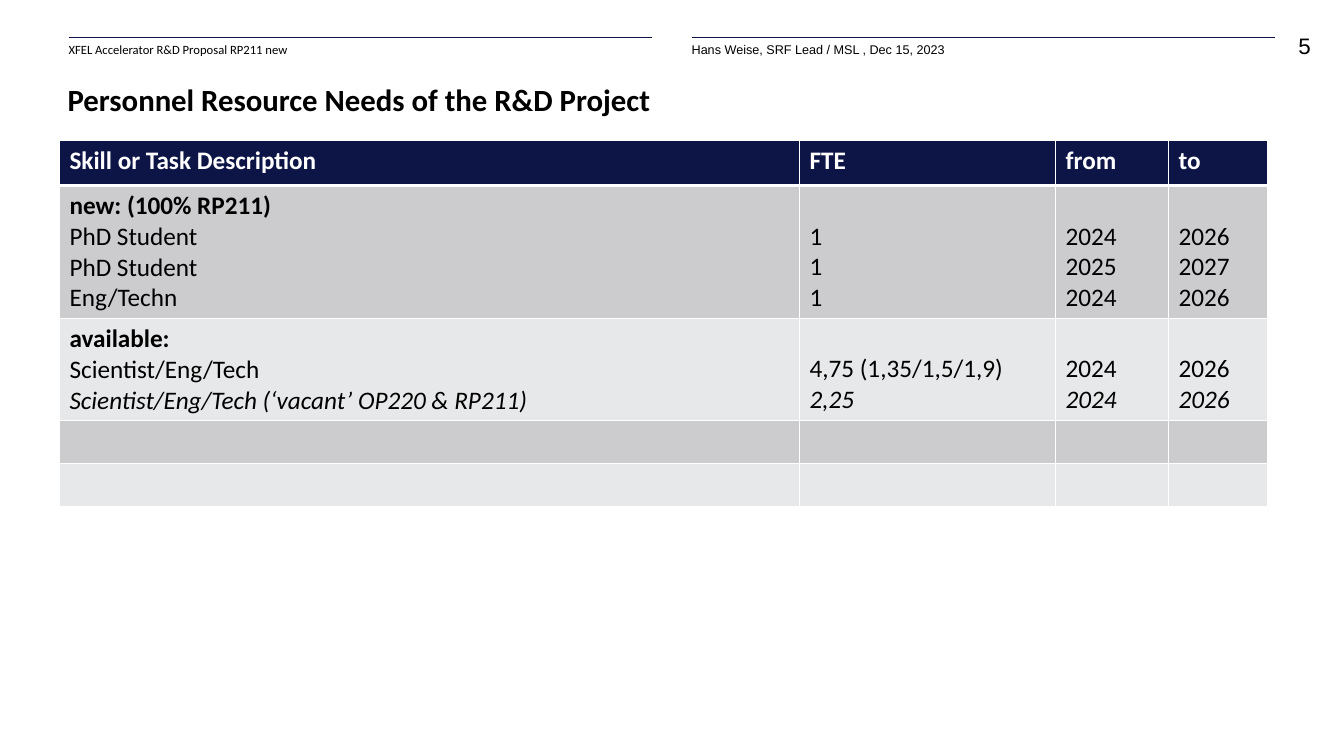
from lxml.etree import SubElement
from pptx import Presentation
from pptx.dml.color import RGBColor
from pptx.enum.shapes import MSO_CONNECTOR
from pptx.enum.text import MSO_ANCHOR, MSO_AUTO_SIZE, PP_ALIGN
from pptx.oxml.ns import qn
from pptx.util import Inches, Pt

COLORS = {"navy": "0D1546", "dark band": "CCCCCF", "light band": "E7E8E9",
          "white": "FFFFFF", "black": "000000"}
TITLE = "Personnel Resource Needs of the R&D Project"
PAGE_NUMBER = "5"
HEADERS = [("XFEL Accelerator R&D Proposal RP211 new", "Calibri"),
           ("Hans Weise, SRF Lead / MSL , Dec 15, 2023", "Arial")]
TABLE = [
    [[("Skill or Task Description", "bold")], [("FTE", "bold")],
     [("from", "bold")], [("to", "bold")]],
    [[("new: (100% RP211)", "bold"), ("PhD Student", ""), ("PhD Student", ""), ("Eng/Techn", "")],
     [("1", ""), ("1", ""), ("1", "")],
     [("2024", ""), ("2025", ""), ("2024", "")],
     [("2026", ""), ("2027", ""), ("2026", "")]],
    [[("available:", "bold"), ("Scientist/Eng/Tech", ""),
      ("Scientist/Eng/Tech (‘vacant’ OP220 & RP211)", "italic")],
     [("4,75 (1,35/1,5/1,9)", ""), ("2,25", "italic")],
     [("2024", ""), ("2024", "italic")],
     [("2026", ""), ("2026", "italic")]],
    [[], [], [], []],
    [[], [], [], []],
]
COLUMN_WIDTHS = [7.34, 2.54, 1.12, 0.98]
ROW_HEIGHTS = [0.45, 1.32, 1.01, 0.43, 0.43]
TABLE_LEFT, TABLE_TOP = 0.59, 1.39
MARGIN, HEADER_WIDTH, HEADER_GAP = 0.68, 5.79, 0.39
RULE_TOP, HEADER_TOP = 0.37, 0.42


def rgb(name):
    return RGBColor.from_string(COLORS[name])


def write(paragraph, text, font_name, size, color="black", style=""):
    run = paragraph.add_run()
    run.text = text
    run.font.name = font_name
    run.font.size = Pt(size)
    run.font.color.rgb = rgb(color)
    run.font.bold = style == "bold"
    run.font.italic = style == "italic"


def clear_margins(frame):
    frame.margin_left = frame.margin_right = frame.margin_top = frame.margin_bottom = 0


def add_text_box(left, top, width, height, wrap=True):
    box = slide.shapes.add_textbox(Inches(left), Inches(top), Inches(width), Inches(height))
    clear_margins(box.text_frame)
    box.text_frame.word_wrap = wrap
    return box.text_frame.paragraphs[0]


def add_borders(cell, bottom_width):
    properties = cell._tc.get_or_add_tcPr()
    for side, width in (("L", 1), ("R", 1), ("T", 1), ("B", bottom_width)):
        line = SubElement(properties, qn(f"a:ln{side}"), w=str(Pt(width)))
        fill = SubElement(line, qn("a:solidFill"))
        SubElement(fill, qn("a:srgbClr"), val=COLORS["white"])


presentation = Presentation()
presentation.slide_width = Inches(13.33)
presentation.slide_height = Inches(7.5)
slide = presentation.slides.add_slide(presentation.slide_layouts[5])

for index, (text, font_name) in enumerate(HEADERS):
    left = MARGIN + index * (HEADER_WIDTH + HEADER_GAP)
    rule = slide.shapes.add_connector(
        MSO_CONNECTOR.STRAIGHT, Inches(left), Inches(RULE_TOP),
        Inches(left + HEADER_WIDTH), Inches(RULE_TOP))
    rule.line.color.rgb = rgb("navy")
    rule.line.width = Pt(0.5)
    SubElement(rule._element.spPr, qn("a:effectLst"))
    write(add_text_box(left, HEADER_TOP, HEADER_WIDTH, 0.24), text, font_name, 9)

number = add_text_box(12.44, 0.32, 0.56, 0.32, wrap=False)
number.alignment = PP_ALIGN.RIGHT
write(number, PAGE_NUMBER, "Arial", 16)

title = slide.shapes.title
title.left, title.top, title.width, title.height = map(Inches, (0.67, 0.78, 11.98, 0.39))
title_frame = title.text_frame
clear_margins(title_frame)
title_frame.word_wrap = True
title_frame.auto_size = MSO_AUTO_SIZE.NONE
title_frame.vertical_anchor = MSO_ANCHOR.BOTTOM
title_frame.paragraphs[0].alignment = PP_ALIGN.LEFT
write(title_frame.paragraphs[0], TITLE, "Calibri", 22, style="bold")

table = slide.shapes.add_table(
    len(ROW_HEIGHTS), len(COLUMN_WIDTHS), Inches(TABLE_LEFT), Inches(TABLE_TOP),
    Inches(sum(COLUMN_WIDTHS)), Inches(sum(ROW_HEIGHTS))).table
for column, width in zip(table.columns, COLUMN_WIDTHS):
    column.width = Inches(width)
for row, height in zip(table.rows, ROW_HEIGHTS):
    row.height = Inches(height)

for row_index, row_content in enumerate(TABLE):
    is_header = row_index == 0
    band = "navy" if is_header else "dark band" if row_index % 2 else "light band"
    for column_index, lines in enumerate(row_content):
        cell = table.cell(row_index, column_index)
        add_borders(cell, 3 if is_header else 1)
        cell.fill.solid()
        cell.fill.fore_color.rgb = rgb(band)
        if column_index and not is_header:
            cell.vertical_anchor = MSO_ANCHOR.BOTTOM
        frame = cell.text_frame
        for line_index, (text, style) in enumerate(lines):
            paragraph = frame.add_paragraph() if line_index else frame.paragraphs[0]
            write(paragraph, text, "Calibri", 18, "white" if is_header else "black", style)

presentation.save("out.pptx")
